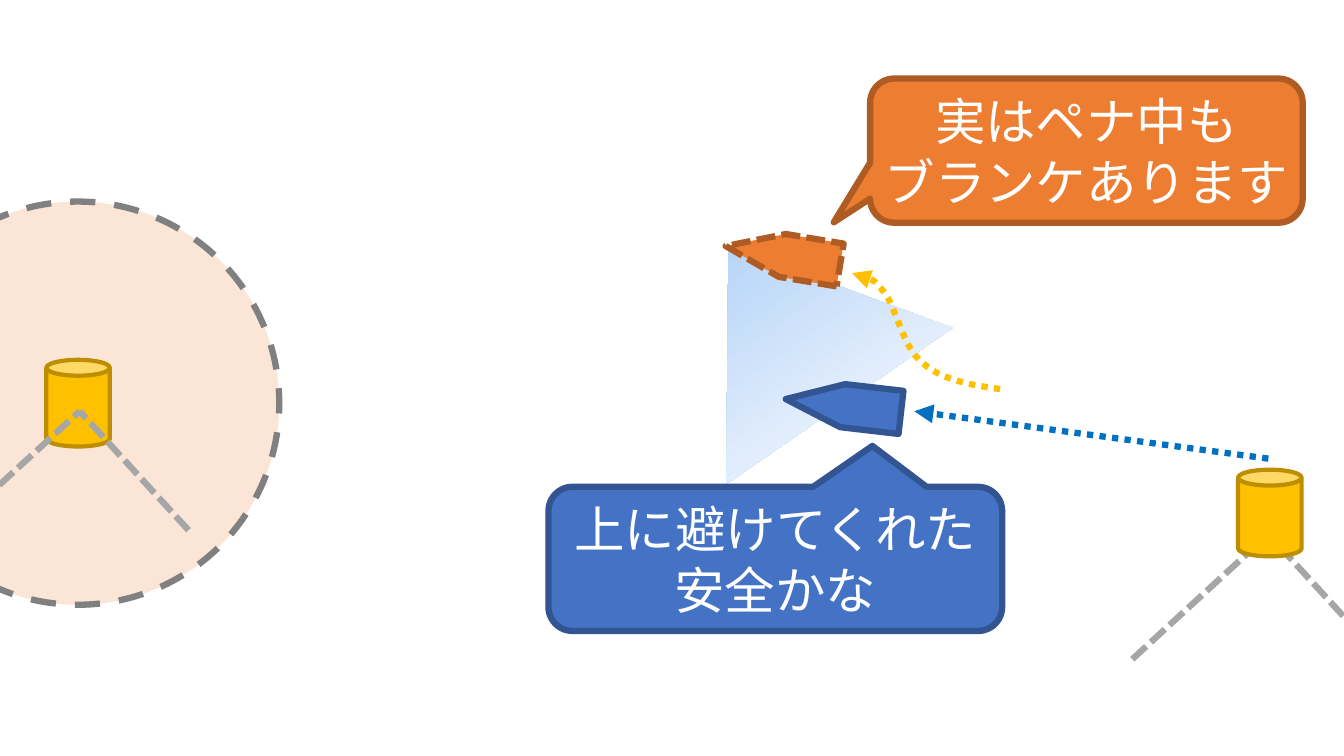
from lxml import etree
from pptx import Presentation
from pptx.dml.color import RGBColor
from pptx.enum.dml import MSO_LINE
from pptx.enum.shapes import MSO_CONNECTOR, MSO_SHAPE
from pptx.enum.text import MSO_ANCHOR, MSO_AUTO_SIZE, PP_ALIGN
from pptx.oxml.ns import qn
from pptx.util import Inches, Pt

DASH, SHORT_DASH, DOT = MSO_LINE.DASH, MSO_LINE.SQUARE_DOT, MSO_LINE.ROUND_DOT
STRAIGHT = MSO_CONNECTOR.STRAIGHT
CALLOUT = MSO_SHAPE.ROUNDED_RECTANGULAR_CALLOUT
HULL, CAN = MSO_SHAPE.PENTAGON, MSO_SHAPE.CAN
OVAL, TRIANGLE = MSO_SHAPE.OVAL, MSO_SHAPE.ISOSCELES_TRIANGLE
CENTER, MIDDLE = PP_ALIGN.CENTER, MSO_ANCHOR.MIDDLE
FIT = MSO_AUTO_SIZE.SHAPE_TO_FIT_TEXT

FONT = "Noto Sans CJK JP"
COLORS = {
    "orange": "ED7D31", "orange_edge": "AF5C24",
    "blue": "4472C4", "blue_edge": "325491",
    "buoy": "FFC000", "buoy_edge": "BD8E00",
    "zone": "FBE5D6", "zone_edge": "808080",
    "wind_near": "9AC3F5", "wind_far": "FFFFFF",
    "leg": "A6A6A6", "blue_course": "0070C0",
    "orange_course": "FFC000", "text": "FFFFFF",
}
HEAVY = 4.5


def rgb(name):
    return RGBColor.from_string(COLORS[name])


def style_line(line, color, width=HEAVY, dash=None):
    line.color.rgb = rgb(color)
    line.width = Pt(width)
    if dash is not None:
        line.dash_style = dash


def add_arrowhead(sp):
    etree.SubElement(sp.line._get_or_add_ln(), qn("a:tailEnd"), type="triangle")


def add_shape(slide, kind, box, fill, edge, width=HEAVY, dash=None):
    sp = slide.shapes.add_shape(kind, *map(Inches, box))
    sp.shadow.inherit = False
    sp.fill.solid()
    sp.fill.fore_color.rgb = rgb(fill)
    style_line(sp.line, edge, width, dash)
    return sp


def add_line(slide, start, end, color, dash):
    line = slide.shapes.add_connector(STRAIGHT, *map(Inches, (*start, *end)))
    style_line(line.line, color, dash=dash)
    etree.SubElement(line._element.spPr, qn("a:effectLst"))
    return line


def add_wind_shadow(slide, box):
    sp = slide.shapes.add_shape(TRIANGLE, *map(Inches, box))
    sp.shadow.inherit = False
    sp.rotation = 325.4
    sp.fill.gradient()
    sp.fill.gradient_angle = 270
    for stop, color in zip(sp.fill.gradient_stops, ("wind_near", "wind_far")):
        stop.color.rgb = rgb(color)
    sp.line.fill.background()


def add_buoy(slide, x, y):
    add_shape(slide, CAN, (x, y, 0.63, 0.86), "buoy", "buoy_edge", 3)


def add_laylines(slide, x, y):
    """Two dashed lines that fan out downwards from (x, y)."""
    for dx, dy in ((-1.35, 1.24), (1.08, 1.18)):
        add_line(slide, (x + dx, y + dy), (x, y), "leg", SHORT_DASH)


def add_boat(slide, x, y, color, rotation, dash=None):
    sp = add_shape(slide, HULL, (x, y, 1.15, 0.43), color, color + "_edge", dash=dash)
    sp.adjustments[0] = 1.321
    sp.rotation = rotation


def add_callout(slide, box, color, tip, lines):
    sp = add_shape(slide, CALLOUT, box, color, color + "_edge")
    for i, value in enumerate((*tip, 0.167)):
        sp.adjustments[i] = value
    tf = sp.text_frame
    tf.word_wrap = True
    tf.auto_size = FIT
    tf.vertical_anchor = MIDDLE
    tf.margin_left = tf.margin_right = Inches(0.04)
    tf.margin_top = tf.margin_bottom = Inches(0.04)
    tf.text = "\n".join(lines)
    for p in tf.paragraphs:
        p.alignment = CENTER
        p.font.size = Pt(36)
        p.font.name = FONT
        p.font.color.rgb = rgb("text")
        latin = p.font._element.find(qn("a:latin"))
        latin.addnext(latin.makeelement(qn("a:ea"), typeface=FONT))


def add_curved_course(slide, points, color):
    """Arrow along cubic curves: a start point, then three points per curve."""
    start, *rest = [(Inches(x), Inches(y)) for x, y in points]
    builder = slide.shapes.build_freeform(*start)
    builder.add_line_segments(rest, close=False)
    sp = builder.convert_to_shape()
    sp.shadow.inherit = False
    sp.fill.background()
    style_line(sp.line, color, dash=DOT)
    add_arrowhead(sp)
    path = sp._element.find(".//" + qn("a:path"))
    segments = path.findall(qn("a:lnTo"))
    for i in range(0, len(segments), 3):
        curve = etree.SubElement(path, qn("a:cubicBezTo"))
        for segment in segments[i:i + 3]:
            curve.append(segment[0])
            path.remove(segment)


def build_slide(prs):
    slide = prs.slides.add_slide(prs.slide_layouts[6])
    add_wind_shadow(slide, (6.41, 2.26, 2.73, 1.94))
    add_shape(slide, OVAL, (-1.23, 2, 4, 4), "zone", "zone_edge", dash=DASH)
    add_laylines(slide, 12.58, 5.3)
    add_buoy(slide, 12.28, 4.66)
    add_callout(slide, (5.44, 4.83, 4.5, 1.43), "blue", (0.214, -0.784),
                ("上に避けてくれた", "安全かな"))
    add_boat(slide, 7.19, 2.32, "orange", 189.4, SHORT_DASH)
    add_buoy(slide, 0.46, 3.57)
    add_callout(slide, (8.63, 0.78, 4.29, 1.43), "orange", (-0.584, 0.497),
                ("実はペナ中も", "ブランケあります"))
    add_boat(slide, 7.79, 3.81, "blue", 186.6)
    add_arrowhead(add_line(slide, (12.58, 4.55), (9.07, 4.08), "blue_course", DOT))
    add_laylines(slide, 0.79, 4.08)
    add_curved_course(slide, (
        (9.92, 3.86),
        (9.63, 3.82), (9.34, 3.77), (9.15, 3.6),
        (8.95, 3.44), (8.89, 3.05), (8.77, 2.9),
        (8.65, 2.75), (8.55, 2.73), (8.45, 2.71),
    ), "orange_course")


def main():
    prs = Presentation()
    prs.slide_width, prs.slide_height = Inches(13.33), Inches(7.5)
    build_slide(prs)
    prs.save("out.pptx")


if __name__ == "__main__":
    main()
